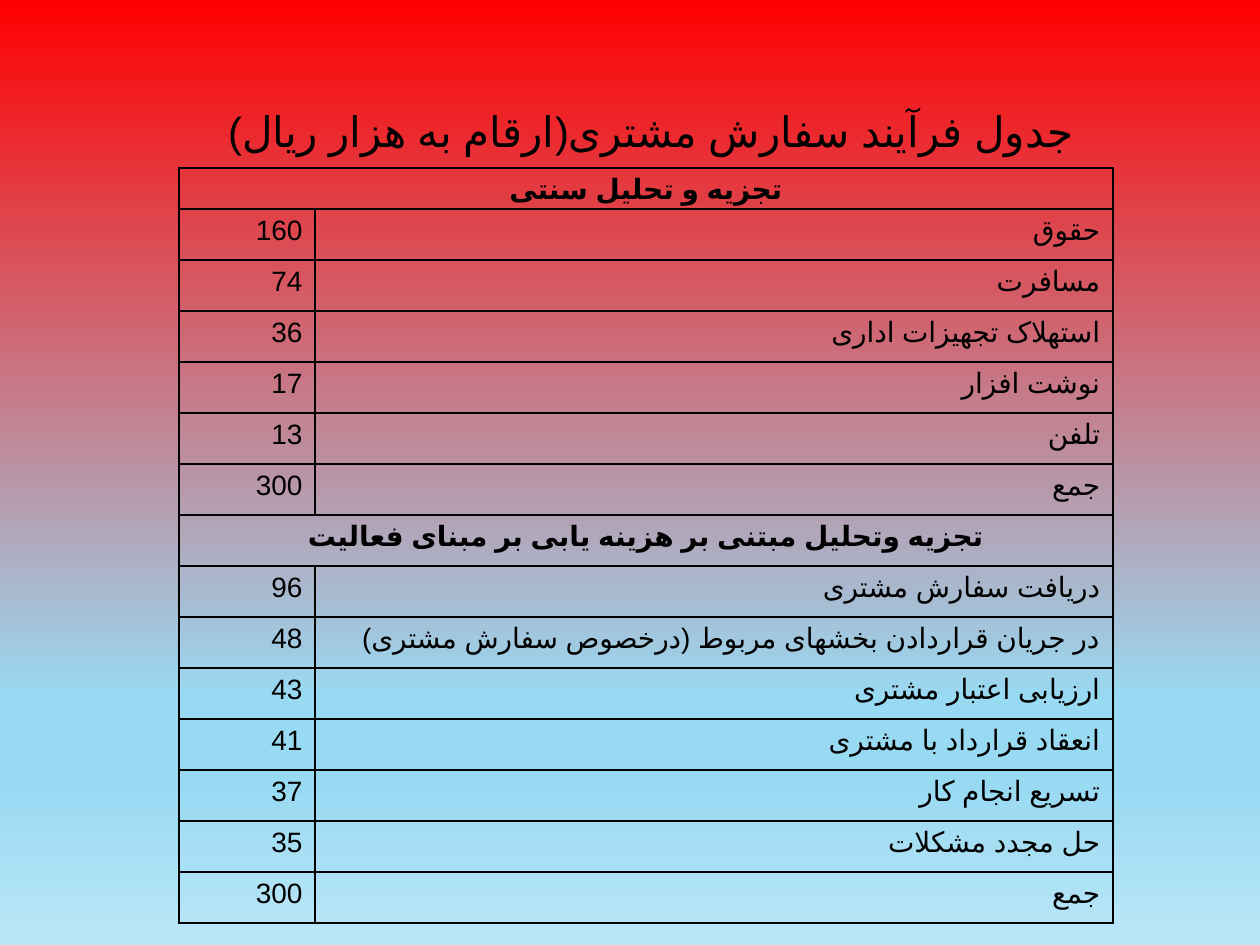
import pptx
import pptx.util
import pptx.dml.color
import pptx.enum.text
import pptx.enum.lang
import pptx.oxml.ns
import lxml.etree

RGB = pptx.dml.color.RGBColor
ALIGN = pptx.enum.text.PP_ALIGN
BLACK = RGB(0, 0, 0)
RED = RGB(0xFF, 0, 0)
SKY = RGB(0x99, 0xDA, 0xF3)
PALE = RGB(0xBB, 0xE6, 0xF7)
FONT = "Calibri"
SCRIPT_FONT = "Arial"

TITLE = "جدول فرآیند سفارش مشتری(ارقام به هزار ریال)"
STOPS = [(0, RED), (74, SKY), (83, SKY), (100, PALE)]
GROUPS = [
    ("تجزیه و تحلیل سنتی", [
        ("حقوق", 160),
        ("مسافرت", 74),
        ("استهلاک تجهیزات اداری", 36),
        ("نوشت افزار", 17),
        ("تلفن", 13),
        ("جمع", 300),
    ]),
    ("تجزیه وتحلیل مبتنی بر هزینه یابی بر مبنای فعالیت", [
        ("دریافت سفارش مشتری", 96),
        ("در جریان قراردادن بخشهای مربوط (درخصوص سفارش مشتری)", 48),
        ("ارزیابی اعتبار مشتری", 43),
        ("انعقاد قرارداد با مشتری", 41),
        ("تسریع انجام کار", 37),
        ("حل مجدد مشکلات", 35),
        ("جمع", 300),
    ]),
]
COLS = [136, 798]
HEAD_H, ROW_H = 41, 51


def px(n):
    return pptx.util.Emu(round(n * 914400 / 126))


def sub(parent, tag, **attrs):
    return lxml.etree.SubElement(parent, pptx.oxml.ns.qn(tag), **attrs)


def write(frame, text, size, align, bold=False):
    """Fill the first paragraph with one right-to-left Persian run."""
    par = frame.paragraphs[0]
    par.alignment = align
    par._p.get_or_add_pPr().set("rtl", "1")
    run = par.add_run()
    run.text = text
    run.font.name = FONT
    run.font.size = pptx.util.Pt(size)
    run.font.bold = bold
    run.font.color.rgb = BLACK
    props = run._r.get_or_add_rPr()
    props.set("lang", "fa-IR")
    sub(props, "a:cs", typeface=SCRIPT_FONT)
    return par


def paint(slide):
    """Give the slide its top-to-bottom gradient."""
    fill = slide.background.fill
    fill.gradient()
    fill.gradient_angle = 270
    stops = next(slide.element.iter(pptx.oxml.ns.qn("a:gsLst")))
    for old in list(stops):
        stops.remove(old)
    for pos, color in STOPS:
        stop = sub(stops, "a:gs", pos=str(pos * 1000))
        sub(stop, "a:srgbClr", val=str(color))


def border(cell):
    """Draw thin black edges and leave the cell clear."""
    props = cell._tc.get_or_add_tcPr()
    for side in ("a:lnL", "a:lnR", "a:lnT", "a:lnB"):
        line = sub(props, side, w=str(pptx.util.Pt(1)))
        sub(sub(line, "a:solidFill"), "a:srgbClr", val=str(BLACK))
    cell.fill.background()


def add_title(slide):
    frame = slide.shapes.add_textbox(px(84), px(105), px(1134), px(73)).text_frame
    frame.word_wrap = True
    frame.margin_left = frame.margin_right = px(6)
    frame.margin_top = frame.margin_bottom = px(6)
    par = write(frame, TITLE, 24, ALIGN.CENTER)
    par.line_spacing = 0.9
    par.space_before = pptx.util.Pt(12)
    par.space_after = pptx.util.Pt(2)


def add_costs(slide):
    rows = []
    for head, items in GROUPS:
        rows.append((head, None))
        rows.extend(items)
    height = HEAD_H + ROW_H * (len(rows) - 1)
    table = slide.shapes.add_table(
        len(rows), 2, px(179), px(168), px(sum(COLS)), px(height)).table
    table.first_row = table.horz_banding = False
    for col, width in zip(table.columns, COLS):
        col.width = px(width)
    for i, (label, cost) in enumerate(rows):
        table.rows[i].height = px(ROW_H if i else HEAD_H)
        left, right = table.cell(i, 0), table.cell(i, 1)
        for cell in (left, right):
            border(cell)
            if i == 0:
                cell.margin_bottom = 0
        if cost is None:
            left.merge(right)
            write(left.text_frame, label, 16, ALIGN.CENTER, True)
        else:
            write(left.text_frame, str(cost), 16, ALIGN.RIGHT)
            write(right.text_frame, label, 16, ALIGN.RIGHT)


def main():
    deck = pptx.Presentation()
    deck.slide_width, deck.slide_height = px(1260), px(945)
    slide = deck.slides.add_slide(deck.slide_layouts[6])
    paint(slide)
    add_title(slide)
    add_costs(slide)
    deck.save("out.pptx")


if __name__ == "__main__":
    main()
